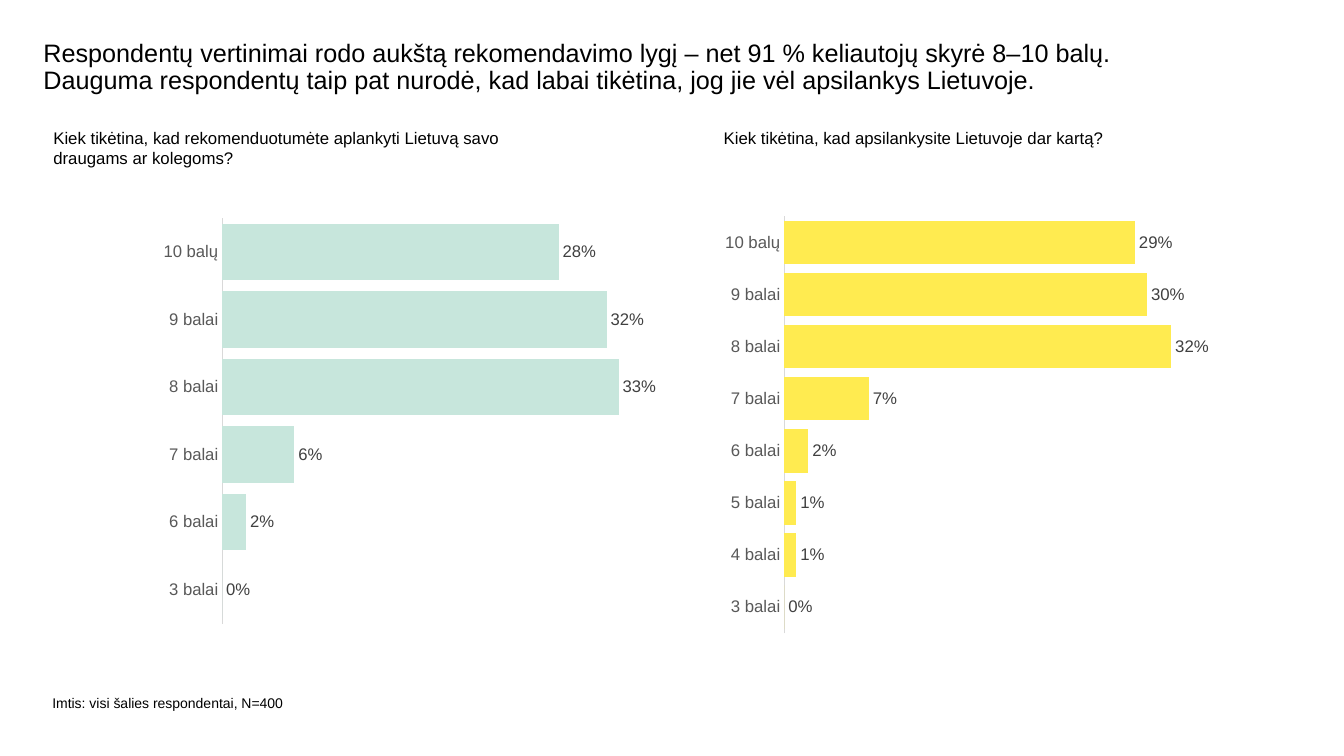
"""Build a slide with two bar charts on recommending and revisiting Lithuania."""
import pptx
import pptx.chart.data
import pptx.dml.color
import pptx.enum.chart
import pptx.enum.text
import pptx.oxml
import pptx.util
from dataclasses import dataclass

TITLE = ("Respondentų vertinimai rodo aukštą rekomendavimo lygį – net 91 % keliautojų skyrė 8–10 balų. "
         "Dauguma respondentų taip pat nurodė, kad labai tikėtina, jog jie vėl apsilankys Lietuvoje.")
SAMPLE = "Imtis: visi šalies respondentai, N=400"
QUESTIONS = [
    {
        "text": "Kiek tikėtina, kad rekomenduotumėte aplankyti Lietuvą savo draugams ar kolegoms?",
        "text_area": (31, 87.8, 373.7, 36),
        "chart_area": (108.7, 149.8, 360, 301.7),
        "color": "C7E6DC",
        "scores": {"10 balų": 0.28, "9 balai": 0.32, "8 balai": 0.33,
                   "7 balai": 0.06, "6 balai": 0.02, "3 balai": 0},
    },
    {
        "text": "Kiek tikėtina, kad apsilankysite Lietuvoje dar kartą?",
        "text_area": (509.8, 87.8, 450, 21.6),
        "chart_area": (509.8, 148.3, 360, 310.3),
        "color": "FFEB50",
        "scores": {"10 balų": 0.29, "9 balai": 0.3, "8 balai": 0.32, "7 balai": 0.07,
                   "6 balai": 0.02, "5 balai": 0.01, "4 balai": 0.01, "3 balai": 0},
    },
]
TITLE_AREA = (31, 28.8, 810, 43.2)
SAMPLE_AREA = (37.4, 496.1, 277.9, 31.7)
PLOT_LAYOUT = {"x": 0.14, "y": 0.02, "w": 0.84, "h": 0.96}
AXIS_MAXIMUM = 0.35


@dataclass(frozen=True)
class Theme:
    """Fonts, sizes and colours of the slide."""
    font: str = "Arial"
    title_size: int = 18
    body_size: int = 12
    note_size: int = 10
    ink: str = "000000"
    axis_text: str = "595959"
    label_text: str = "404040"
    axis_line: str = "D9D9D9"


THEME = Theme()


def rgb(value):
    """Turn a hex value into a colour."""
    return pptx.dml.color.RGBColor.from_string(value)


def apply(target, values):
    """Set attributes from a dict."""
    for name, value in values.items():
        setattr(target, name, value)


def points(area):
    """Turn numbers into point lengths."""
    return [pptx.util.Pt(number) for number in area]


def style_font(font, size, color):
    """Format a font with the theme typeface."""
    apply(font, {"name": THEME.font, "size": pptx.util.Pt(size), "bold": False})
    font.color.rgb = rgb(color)


def write_text(box, text, size, insets=(0, 0), line_spacing=1.0):
    """Fill a box with one paragraph."""
    side, edge = points(insets)
    frame = box.text_frame
    apply(frame, {
        "word_wrap": True,
        "auto_size": pptx.enum.text.MSO_AUTO_SIZE.NONE,
        "vertical_anchor": pptx.enum.text.MSO_ANCHOR.TOP,
        "margin_left": side, "margin_right": side, "margin_top": edge, "margin_bottom": edge,
    })
    para = frame.paragraphs[0]
    apply(para, {"alignment": pptx.enum.text.PP_ALIGN.LEFT, "line_spacing": line_spacing})
    span = para.add_run()
    span.text = text
    style_font(span.font, size, THEME.ink)


def fix_plot_area(chart):
    """Place the inner plot area by fractions of the chart."""
    plot_area = chart.plots[0]._element.getparent()
    for old in plot_area.findall(pptx.oxml.ns.qn("c:layout")):
        plot_area.remove(old)
    settings = {"layoutTarget": "inner", "xMode": "edge", "yMode": "edge", **PLOT_LAYOUT}
    marks = "".join(f'<c:{name} val="{value}"/>' for name, value in settings.items())
    plot_area.insert(0, pptx.oxml.parse_xml(
        f'<c:layout {pptx.oxml.ns.nsdecls("c")}><c:manualLayout>{marks}</c:manualLayout></c:layout>'))


def add_score_chart(page, question):
    """Add the bar chart of one question."""
    data = pptx.chart.data.CategoryChartData(number_format="0%")
    data.categories = list(question["scores"])
    data.add_series("Series 1", list(question["scores"].values()))
    chart = page.shapes.add_chart(
        pptx.enum.chart.XL_CHART_TYPE.BAR_CLUSTERED, *points(question["chart_area"]), data).chart
    apply(chart, {"has_legend": False, "has_title": False})
    style_font(chart.font, THEME.note_size, THEME.ink)

    no_ticks = pptx.enum.chart.XL_TICK_MARK.NONE
    axis = chart.category_axis
    apply(axis, {"reverse_order": True, "has_major_gridlines": False,
                 "major_tick_mark": no_ticks, "minor_tick_mark": no_ticks})
    style_font(axis.tick_labels.font, THEME.body_size, THEME.axis_text)
    axis.format.line.color.rgb = rgb(THEME.axis_line)
    axis.format.line.width = pptx.util.Pt(0.75)
    apply(chart.value_axis, {"visible": False, "has_major_gridlines": False,
                             "minimum_scale": 0, "maximum_scale": AXIS_MAXIMUM})

    plot = chart.plots[0]
    apply(plot, {"gap_width": 20, "vary_by_categories": False, "has_data_labels": True})
    apply(plot.data_labels, {
        "show_value": True, "number_format": "0%", "number_format_is_linked": False,
        "position": pptx.enum.chart.XL_LABEL_POSITION.OUTSIDE_END,
    })
    style_font(plot.data_labels.font, THEME.body_size, THEME.label_text)
    fill = plot.series[0].format.fill
    fill.solid()
    fill.fore_color.rgb = rgb(question["color"])
    fix_plot_area(chart)


def main():
    """Build and save the deck."""
    deck = pptx.Presentation()
    apply(deck, {"slide_width": pptx.util.Pt(960), "slide_height": pptx.util.Pt(540)})
    page = deck.slides.add_slide(deck.slide_layouts.get_by_name("Title Only"))
    title = page.shapes.title
    apply(title, dict(zip(("left", "top", "width", "height"), points(TITLE_AREA))))
    write_text(title, TITLE, THEME.title_size, line_spacing=0.9)
    write_text(page.shapes.add_textbox(*points(SAMPLE_AREA)), SAMPLE, THEME.note_size)
    for question in QUESTIONS:
        box = page.shapes.add_textbox(*points(question["text_area"]))
        write_text(box, question["text"], THEME.body_size, insets=(7.2, 3.6))
        add_score_chart(page, question)
    deck.save("out.pptx")


if __name__ == "__main__":
    main()
